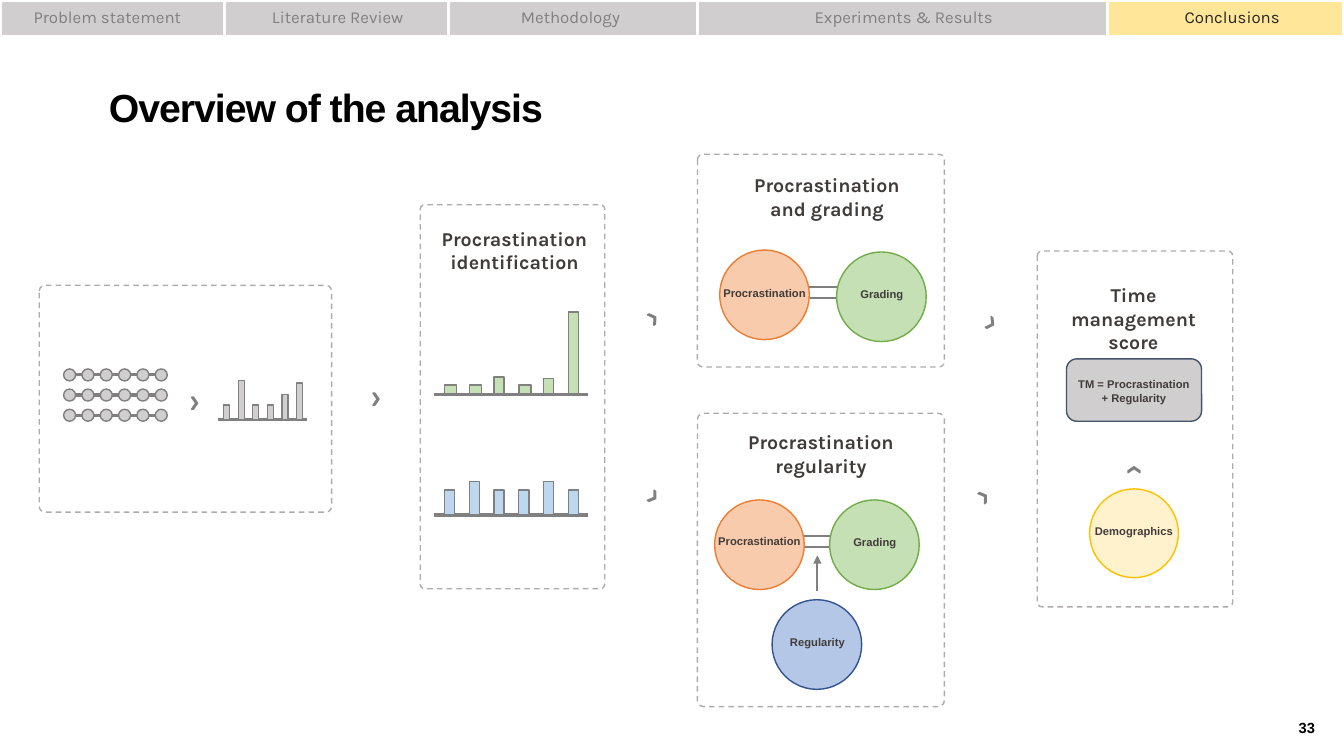
"""Builds the slide that gives an overview of the procrastination analysis."""
from lxml import etree
from pptx import Presentation
from pptx.dml.color import RGBColor
from pptx.enum.dml import MSO_LINE
from pptx.enum.shapes import MSO_CONNECTOR, MSO_SHAPE
from pptx.enum.text import MSO_ANCHOR, MSO_AUTO_SIZE, PP_ALIGN
from pptx.oxml.ns import qn
from pptx.util import Pt

RECTANGLE = MSO_SHAPE.RECTANGLE
ROUNDED = MSO_SHAPE.ROUNDED_RECTANGLE
OVAL = MSO_SHAPE.OVAL
CHEVRON = MSO_SHAPE.CHEVRON
STRAIGHT = MSO_CONNECTOR.STRAIGHT
DASH = MSO_LINE.DASH
LEFT, CENTER = PP_ALIGN.LEFT, PP_ALIGN.CENTER
TOP, MIDDLE = MSO_ANCHOR.TOP, MSO_ANCHOR.MIDDLE
NO_AUTOFIT = MSO_AUTO_SIZE.NONE

COLORS = {
    "black": "000000", "white": "FFFFFF", "ink": "413C3A", "active ink": "262626",
    "gray": "808080", "light gray": "D0CECE", "frame": "AFABAB", "slate": "44546A",
    "highlight": "FFE699", "cream": "FFF2CC", "gold": "FFC000",
    "peach": "F8CBAD", "orange": "ED7D31", "light green": "C5E0B4", "green": "70AD47",
    "sky": "BDD7EE", "light blue": "B4C7E7", "blue": "325491",
}


class SlideBuilder:
    """Draws styled elements on one slide, with lengths in points."""

    heading_font = "Karla"
    label_font = "Arial"

    def __init__(self, slide):
        self.slide = slide

    def color(self, name):
        return RGBColor.from_string(COLORS[name])

    def fill_text(self, shape, text, font, size, color, bold,
                  align=CENTER, anchor=TOP, inset=7.2):
        frame = shape.text_frame
        frame.text = text
        frame.word_wrap = True
        frame.auto_size = NO_AUTOFIT
        frame.vertical_anchor = anchor
        frame.margin_left = frame.margin_right = Pt(7.2)
        frame.margin_top = frame.margin_bottom = Pt(inset)
        for para in frame.paragraphs:
            para.alignment = align
            for span in para.runs:
                span.font.name = font
                span.font.size = Pt(size)
                span.font.bold = bold
                span.font.color.rgb = self.color(color)

    def title(self, text, left, top, width, height):
        title = self.slide.shapes.title
        title.left, title.top, title.width, title.height = map(Pt, (left, top, width, height))
        self.fill_text(title, text, self.label_font, 28, "black", True, LEFT, inset=0)
        title.text_frame.margin_left = Pt(14.4)
        for span in title.text_frame.paragraphs[0].runs:
            span.font._element.set("spc", "-70")

    def text(self, text, left, top, width, height, *style, **layout):
        box = self.slide.shapes.add_textbox(Pt(left), Pt(top), Pt(width), Pt(height))
        self.fill_text(box, text, *style, **layout)

    def heading(self, text, left, top, width):
        self.text(text, left, top, width, 55.4, self.heading_font, 14, "ink", True)

    def label(self, text, center, middle, width=100.8):
        self.text(text, center - width / 2, middle - 9.4, width, 18.7,
                  self.label_font, 8, "ink", True, anchor=MIDDLE)

    def shape(self, kind, left, top, width, height, fill, line, weight=1):
        shape = self.slide.shapes.add_shape(kind, Pt(left), Pt(top), Pt(width), Pt(height))
        shape.shadow.inherit = False
        if fill:
            shape.fill.solid()
            shape.fill.fore_color.rgb = self.color(fill)
        else:
            shape.fill.background()
        shape.line.color.rgb = self.color(line)
        shape.line.width = Pt(weight)
        return shape

    def frame(self, left, top, width, height):
        frame = self.shape(ROUNDED, left, top, width, height, None, "frame")
        frame.adjustments[0] = 0.025
        frame.line.dash_style = DASH

    def circle(self, left, top, fill, line, diameter=64):
        self.shape(OVAL, left, top, diameter, diameter, fill, line)

    def chevron(self, center, middle, rotation=0):
        width, height = 4.3, 8.6
        chevron = self.shape(CHEVRON, center - width / 2, middle - height / 2,
                             width, height, "gray", "gray")
        chevron.adjustments[0] = 0.68
        chevron.rotation = rotation

    def line(self, x1, y1, x2, y2, weight, arrow=False):
        line = self.slide.shapes.add_connector(STRAIGHT, Pt(x1), Pt(y1), Pt(x2), Pt(y2))
        line.line.color.rgb = self.color("gray")
        line.line.width = Pt(weight)
        if arrow:
            etree.SubElement(line.line._get_or_add_ln(), qn("a:tailEnd"), type="triangle")
        etree.SubElement(line._element.spPr, qn("a:effectLst"))

    def chain(self, middle):
        self.line(47.5, middle, 110.9, middle, 2.25)
        for index in range(6):
            self.circle(45.4 + 13.1 * index, middle - 4.3, "light gray", "gray", 8.6)

    def bars(self, left, right, base, first, step, fill, sizes):
        self.line(left, base, right, base, 2.25)
        for index, (width, height) in enumerate(sizes):
            self.shape(RECTANGLE, first + step * index, base - height, width, height, fill, "gray")

    def pair(self, left, top, grading_left, grading_top, link_top, label_middle, label_width):
        for offset in (0, 7.9):
            self.line(left + 52, link_top + offset, left + 93.8, link_top + offset, 1.5)
        self.circle(left, top, "peach", "orange")
        self.label("Procrastination", left + 32, label_middle, label_width)
        self.circle(grading_left, grading_top, "light green", "green")
        self.label("Grading", grading_left + 32.3, label_middle + 0.7, 64)


def draw_navigation(page):
    tabs = [
        ("Problem statement", 0, 160.3, 13.7, 126),
        ("Literature Review", 160.3, 160.3, 182.2, 118.1),
        ("Methodology", 320.6, 177.4, 348.5, 118.1),
        ("Experiments & Results", 498, 293.3, 572.4, 146.2),
        ("Conclusions", 791.3, 168.7, 827.3, 105.8),
    ]
    for name, left, width, label_left, label_width in tabs:
        active = name == "Conclusions"
        page.shape(RECTANGLE, left, 0, width, 25.9,
                   "highlight" if active else "light gray", "white", 2.25)
        page.text(name, label_left, -2.2, label_width, 34.6, page.heading_font, 12,
                  "active ink" if active else "gray", False)


def draw_data(page):
    for row in range(3):
        page.chain(267.8 + 14.4 * row)
    page.chevron(139, 288)
    heights = (10.5, 28.1, 10.5, 10.5, 18, 26.2)
    page.bars(155.5, 219.6, 299.8, 159.8, 10.4, "light gray",
              [(4.3, height) for height in heights])
    page.frame(28.1, 203.8, 208.8, 162)


def draw_identification(page):
    late = [(8.6, 6.5), (8.6, 6.5), (7.2, 12.2), (8.6, 6.5), (7.2, 11.2), (7.2, 58.5)]
    steady = [(7.2, height) for height in (18, 23.8, 18, 18, 23.8, 18)]
    page.bars(310.3, 419.8, 281.5, 317.5, 17.7, "light green", late)
    page.bars(310.3, 419.8, 367.9, 317.5, 17.7, "sky", steady)
    page.heading("Procrastination\nidentification", 306.7, 154.8, 121.7)
    page.frame(300.2, 146.2, 131.8, 274.3)


def draw_relations(page):
    page.frame(498.2, 110.2, 176.4, 151.9)
    page.heading("Procrastination\nand grading", 529.9, 116.6, 121.7)
    page.pair(514.1, 178.6, 597.6, 180, 205.2, 209.5, 75.6)
    page.frame(498.2, 295.2, 176.4, 209.5)
    page.heading("Procrastination\nregularity", 525.6, 300.2, 121.7)
    page.pair(510.5, 357.1, 592.6, 357.1, 383, 386.6, 100.8)
    page.circle(551.5, 428.4, "light blue", "blue")
    page.label("Regularity", 583.9, 458.6)
    page.line(583.9, 421.9, 583.9, 396.7, 1.5, arrow=True)


def draw_score(page):
    page.frame(740.9, 179.3, 139.7, 254.2)
    page.heading("Time management score", 741.6, 195.1, 136.1)
    page.shape(ROUNDED, 761.8, 256.3, 96.5, 44.6, "light gray", "slate")
    page.label("TM = Procrastination + Regularity", 810, 279.4)
    page.chevron(810, 335.5, 270)
    page.circle(778.3, 349.2, "cream", "gold", 63.4)
    page.label("Demographics", 810, 379.4)


def main():
    deck = Presentation()
    deck.slide_width, deck.slide_height = Pt(960), Pt(540)
    page = SlideBuilder(deck.slides.add_slide(deck.slide_layouts[5]))
    page.title("Overview of the analysis", 63.4, 59.8, 445.7, 61.9)
    draw_navigation(page)
    draw_data(page)
    draw_identification(page)
    draw_relations(page)
    draw_score(page)
    steps = [(268.6, 285.1, 0), (466.6, 227.5, 328.7), (466.6, 355, 33.9),
             (707.8, 231.1, 28.7), (702.7, 355, 327.2)]
    for center, middle, rotation in steps:
        page.chevron(center, middle, rotation)
    page.text("33", 915.1, 513.4, 36.7, 13, page.label_font, 10.5, "black", True, inset=0)
    deck.save("out.pptx")


if __name__ == "__main__":
    main()
